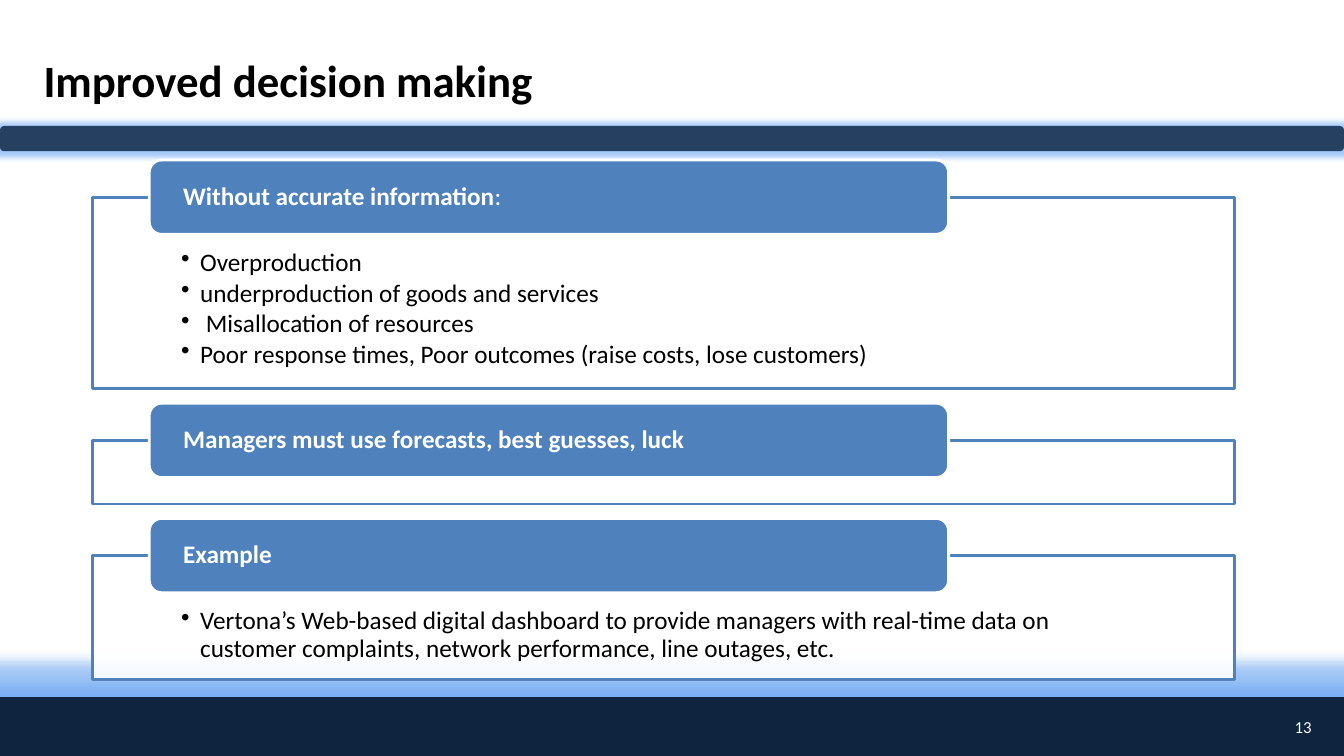
from dataclasses import dataclass

from lxml.etree import SubElement
from pptx import Presentation
from pptx.dml.color import RGBColor
from pptx.enum.shapes import MSO_SHAPE
from pptx.enum.text import MSO_ANCHOR, PP_ALIGN
from pptx.oxml.ns import qn
from pptx.util import Pt


@dataclass(frozen=True)
class Theme:
    font: str = "Calibri"
    black: str = "000000"
    white: str = "FFFFFF"
    accent: str = "4F81BD"
    bar: str = "254061"
    footer: str = "0F243E"
    glow: str = "65A2F2"
    title_size: float = 32
    body_size: float = 18
    number_size: float = 12


THEME = Theme()
SLIDE_WIDTH, SLIDE_HEIGHT = 960, 540
PANEL_LEFT, PANEL_WIDTH = 66.2, 815.8
HEADER_LEFT, HEADER_WIDTH, HEADER_HEIGHT = 106.6, 571, 53.1
HEADER_RISE = 26.6
FIRST_PANEL_TOP, PANEL_GAP = 140.9, 36.9

# heading runs as (text, bold), bullets, panel height
SECTIONS = [
    ([("Without accurate information", True), (":", False)],
     ["Overproduction",
      "underproduction of goods and services",
      " Misallocation of resources",
      "Poor response times, Poor outcomes (raise costs, lose customers)"],
     136.8),
    ([("Managers must use forecasts, best guesses, luck", True)], [], 45.4),
    ([("Example", True)],
     ["Vertona’s Web-based digital dashboard to provide managers with "
      "real-time data on customer complaints, network performance, "
      "line outages, etc."],
     88.6),
]


def rgb(code):
    return RGBColor.from_string(code)


def add_block(slide, kind, left, top, width, height, fill, line=None):
    block = slide.shapes.add_shape(kind, Pt(left), Pt(top), Pt(width), Pt(height))
    block.shadow.inherit = False
    block.fill.solid()
    block.fill.fore_color.rgb = rgb(fill)
    if line:
        block.line.color.rgb = rgb(line)
        block.line.width = Pt(2)
    else:
        block.line.fill.background()
    return block


def add_glow(block, radius):
    effects = block._element.spPr.find(qn("a:effectLst"))
    glow = SubElement(effects, qn("a:glow"), rad=str(Pt(radius)))
    color = SubElement(glow, qn("a:srgbClr"), val=THEME.glow)
    SubElement(color, qn("a:alpha"), val="60000")


def set_frame(frame, anchor, left, top, right, bottom):
    frame.word_wrap = True
    frame.vertical_anchor = anchor
    frame.margin_left, frame.margin_top = Pt(left), Pt(top)
    frame.margin_right, frame.margin_bottom = Pt(right), Pt(bottom)


def style_paragraph(para, size, color, align=PP_ALIGN.LEFT, bold=None):
    para.alignment = align
    para.font.name = THEME.font
    para.font.size = Pt(size)
    para.font.color.rgb = rgb(color)
    para.font.bold = bold


def add_bullet(para):
    properties = para._p.get_or_add_pPr()
    properties.set("marL", str(Pt(13.5)))
    properties.set("indent", str(Pt(-13.5)))
    bullet = properties.makeelement(qn("a:buChar"), {"char": "•"})
    properties.insert_element_before(bullet, "a:tabLst", "a:defRPr", "a:extLst")


def add_label(slide, text, left, top, width, height, size, color, align, bold=None):
    box = slide.shapes.add_textbox(Pt(left), Pt(top), Pt(width), Pt(height))
    set_frame(box.text_frame, MSO_ANCHOR.MIDDLE, 7.2, 3.6, 7.2, 3.6)
    para = box.text_frame.paragraphs[0]
    para.text = text
    style_paragraph(para, size, color, align, bold)


def add_panel(slide, top, height, bullets):
    panel = add_block(slide, MSO_SHAPE.RECTANGLE, PANEL_LEFT, top, PANEL_WIDTH,
                      height, THEME.white, THEME.accent)
    fill_color = panel._element.spPr.find(qn("a:solidFill"))[0]
    SubElement(fill_color, qn("a:alpha"), val="90000")
    frame = panel.text_frame
    set_frame(frame, MSO_ANCHOR.TOP, 63.3, 37.5, 63.3, 10)
    for index, text in enumerate(bullets):
        para = frame.add_paragraph() if index else frame.paragraphs[0]
        para.text = text
        style_paragraph(para, THEME.body_size, THEME.black)
        para.line_spacing = 0.9
        para.space_after = Pt(2.5)
        add_bullet(para)


def add_header(slide, panel_top, runs):
    header = add_block(slide, MSO_SHAPE.ROUNDED_RECTANGLE, HEADER_LEFT,
                       panel_top - HEADER_RISE, HEADER_WIDTH, HEADER_HEIGHT,
                       THEME.accent, THEME.white)
    set_frame(header.text_frame, MSO_ANCHOR.MIDDLE, 21.6, 0, 21.6, 0)
    para = header.text_frame.paragraphs[0]
    style_paragraph(para, THEME.body_size, THEME.white)
    para.line_spacing = 0.9
    for text, bold in runs:
        span = para.add_run()
        span.text = text
        span.font.bold = bold


def main():
    deck = Presentation()
    deck.slide_width, deck.slide_height = Pt(SLIDE_WIDTH), Pt(SLIDE_HEIGHT)
    slide = deck.slides.add_slide(deck.slide_layouts[6])

    footer = add_block(slide, MSO_SHAPE.RECTANGLE, 0, 498, SLIDE_WIDTH, 42, THEME.footer)
    add_glow(footer, 18)
    title_bar = add_block(slide, MSO_SHAPE.ROUNDED_RECTANGLE, 0, 90, SLIDE_WIDTH, 18,
                          THEME.bar)
    add_glow(title_bar, 8)
    add_label(slide, "Improved decision making", 24, 30, 832, 54,
              THEME.title_size, THEME.black, PP_ALIGN.LEFT, bold=True)

    top = FIRST_PANEL_TOP
    for heading, bullets, height in SECTIONS:
        add_panel(slide, top, height, bullets)
        add_header(slide, top, heading)
        top += height + PANEL_GAP

    add_label(slide, "13", 904, 504, 40, 30, THEME.number_size, THEME.white,
              PP_ALIGN.RIGHT)
    deck.save("out.pptx")


if __name__ == "__main__":
    main()
